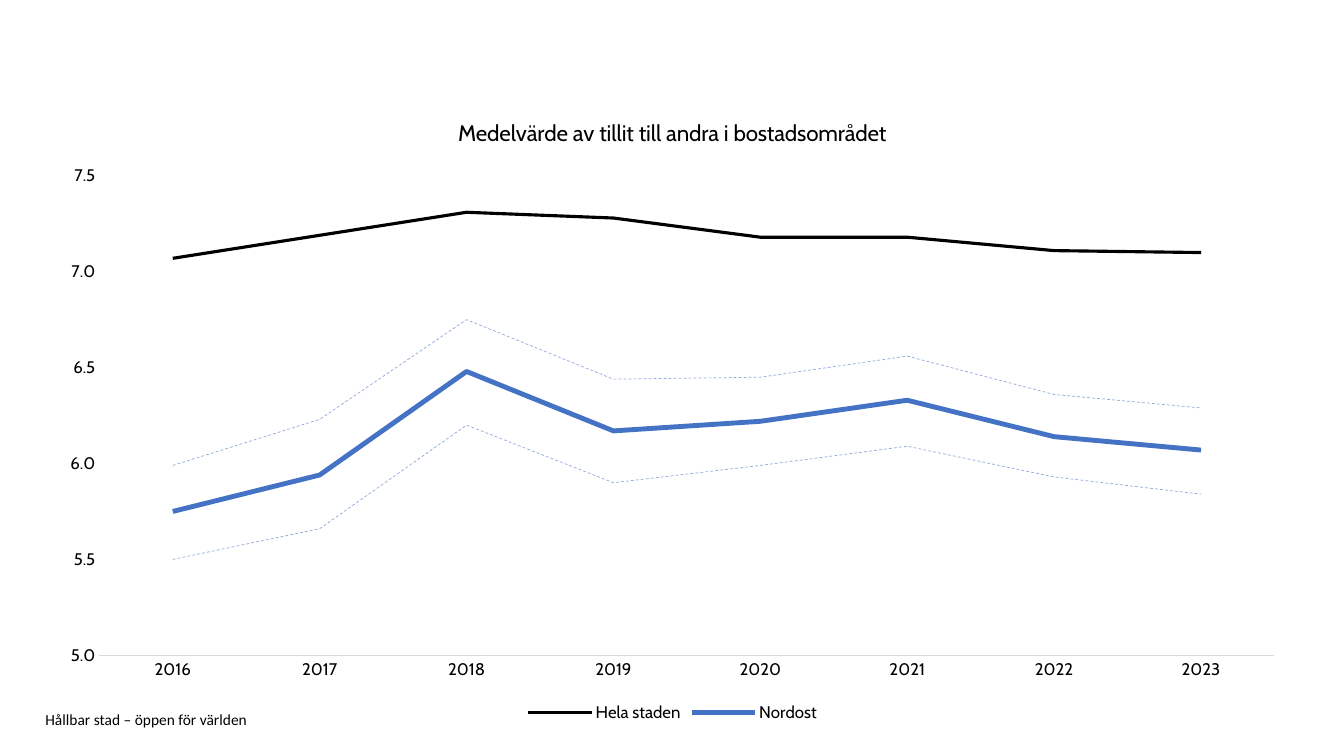
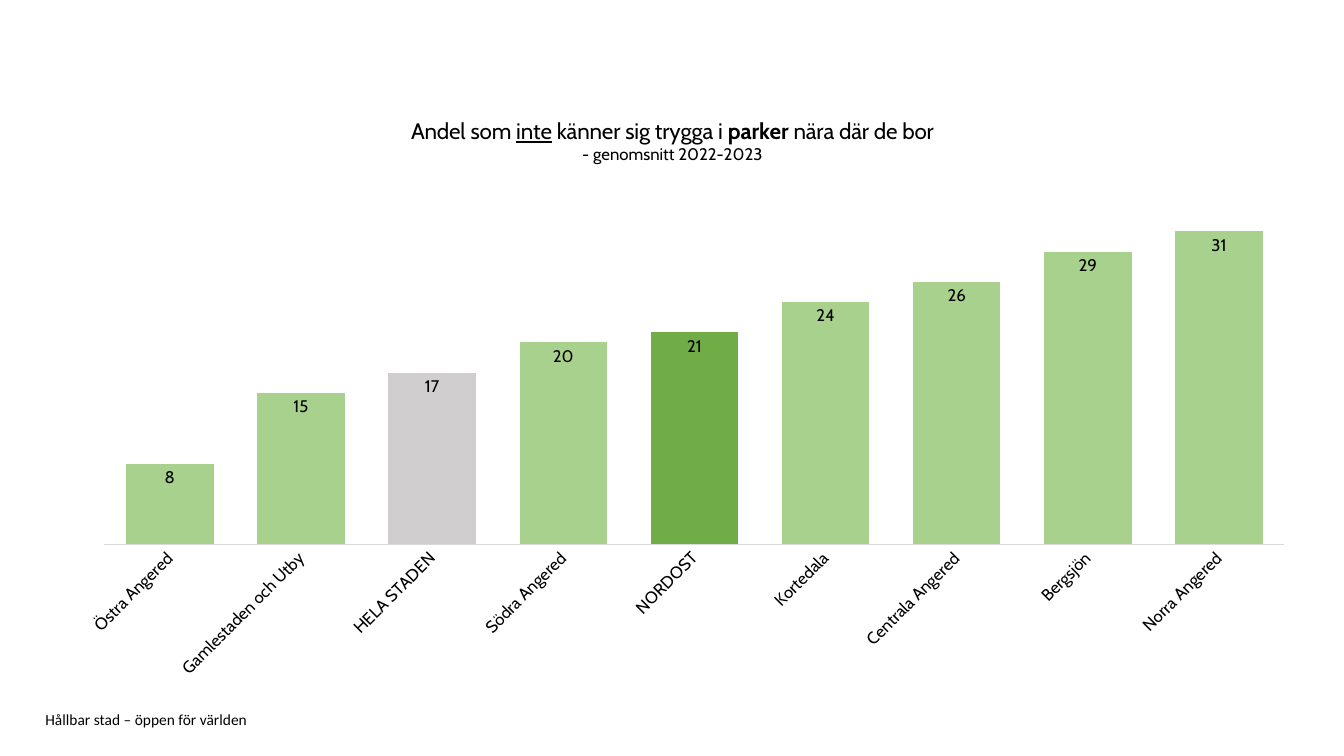
from lxml import etree
from pptx import Presentation
from pptx.chart.data import CategoryChartData
from pptx.dml.color import RGBColor
from pptx.enum.chart import XL_CHART_TYPE, XL_LABEL_POSITION, XL_LEGEND_POSITION, XL_TICK_MARK
from pptx.enum.dml import MSO_LINE
from pptx.enum.text import MSO_ANCHOR
from pptx.oxml.ns import qn
from pptx.util import Inches, Pt

BLACK, AXIS_GREY, GREY = "000000", "D9D9D9", "D0CECE"
BLUE, LIGHT_BLUE = "4472C4", "8FAADC"
GREEN, LIGHT_GREEN = "70AD47", "A9D18E"


def color(hex_string):
    return RGBColor.from_string(hex_string)


def add_chart_slide(presentation, chart_type, categories, series_values, title_lines, plot_box):
    """Add a slide with footer and chart; title lines are lists of (text, style) runs."""
    slide = presentation.slides.add_slide(presentation.slide_layouts[6])

    # Footer
    footer = slide.shapes.add_textbox(Inches(0.45), Inches(7.06), Inches(9.45), Inches(0.16))
    frame = footer.text_frame
    frame.word_wrap = True
    frame.vertical_anchor = MSO_ANCHOR.MIDDLE
    frame.margin_left = frame.margin_right = frame.margin_top = frame.margin_bottom = 0
    paragraph = frame.paragraphs[0]
    paragraph.text = "Hållbar stad – öppen för världen"
    paragraph.font.name = "Calibri"
    paragraph.font.size = Pt(11)
    paragraph.font.color.rgb = color(BLACK)

    # Chart
    chart_data = CategoryChartData()
    chart_data.categories = categories
    for name, values in series_values:
        chart_data.add_series(name, values)
    chart = slide.shapes.add_chart(
        chart_type, Inches(0.45), Inches(0.95), Inches(12.44), Inches(6.26), chart_data
    ).chart
    chart.font.name = "Cabin"
    chart.font.size = Pt(12)
    chart.font.color.rgb = color(BLACK)
    chart.has_legend = False
    chart.plots[0].vary_by_categories = False

    # Chart title
    title_frame = chart.chart_title.text_frame
    for number, (size, runs) in enumerate(title_lines):
        paragraph = title_frame.add_paragraph() if number else title_frame.paragraphs[0]
        paragraph.font.name = "Cabin"
        paragraph.font.size = Pt(size)
        paragraph.font.bold = False
        paragraph.font.color.rgb = color(BLACK)
        for text, style in runs:
            run = paragraph.add_run()
            run.text = text
            run.font.size = Pt(size)
            run.font.bold = style == "bold"
            run.font.underline = style == "underline"

    # Axes
    for axis in (chart.category_axis, chart.value_axis):
        axis.has_major_gridlines = False
        axis.major_tick_mark = axis.minor_tick_mark = XL_TICK_MARK.NONE
    chart.category_axis.format.line.color.rgb = color(AXIS_GREY)
    chart.category_axis.format.line.width = Pt(0.75)
    chart.value_axis.format.line.fill.background()

    # Inner plot area, as fractions of the chart
    plot_area = chart.plots[0]._element.getparent()
    for old_layout in plot_area.findall(qn("c:layout")):
        plot_area.remove(old_layout)
    layout = etree.Element(qn("c:layout"))
    plot_area.insert(0, layout)
    manual = etree.SubElement(layout, qn("c:manualLayout"))
    settings = [("layoutTarget", "inner"), ("xMode", "edge"), ("yMode", "edge")]
    settings += zip("xywh", plot_box)
    for tag, value in settings:
        etree.SubElement(manual, qn(f"c:{tag}")).set("val", str(value))
    return chart


presentation = Presentation()
presentation.slide_width = Inches(13.33)
presentation.slide_height = Inches(7.5)

# Slide 1: trust over time, with dashed confidence limits
trust_series = [
    ("Hela staden", [7.07, 7.19, 7.31, 7.28, 7.18, 7.18, 7.11, 7.1]),
    ("Nordost", [5.75, 5.94, 6.48, 6.17, 6.22, 6.33, 6.14, 6.07]),
    ("Series 3", [5.5, 5.66, 6.2, 5.9, 5.99, 6.09, 5.93, 5.84]),
    ("Series 4", [5.99, 6.23, 6.75, 6.44, 6.45, 6.56, 6.36, 6.29]),
]
trust_chart = add_chart_slide(
    presentation,
    XL_CHART_TYPE.LINE,
    [str(year) for year in range(2016, 2024)],
    trust_series,
    [(16, [("Medelvärde av tillit till andra i bostadsområdet", None)])],
    (0.043, 0.127, 0.937, 0.76),
)
line_styles = [(BLACK, 2.25, None), (BLUE, 3.5, None)] + [(LIGHT_BLUE, 0.5, MSO_LINE.DASH)] * 2
for series, (line_color, width, dash) in zip(trust_chart.plots[0].series, line_styles):
    series.smooth = False
    series.format.line.color.rgb = color(line_color)
    series.format.line.width = Pt(width)
    if dash:
        series.format.line.dash_style = dash

value_axis = trust_chart.value_axis
value_axis.minimum_scale, value_axis.maximum_scale, value_axis.major_unit = 5, 7.5, 0.5
value_axis.tick_labels.number_format = "0.0"
value_axis.tick_labels.number_format_is_linked = False

# Legend without the confidence limits
trust_chart.has_legend = True
legend = trust_chart.legend
legend.position = XL_LEGEND_POSITION.BOTTOM
legend.include_in_layout = False
legend_position = legend._element.find(qn("c:legendPos"))
for index in (3, 2):
    entry = etree.Element(qn("c:legendEntry"))
    etree.SubElement(entry, qn("c:idx")).set("val", str(index))
    etree.SubElement(entry, qn("c:delete")).set("val", "1")
    legend_position.addnext(entry)

# Slide 2: share feeling unsafe in parks, by area
park_shares = {
    "Östra Angered": 8,
    "Gamlestaden och Utby": 15,
    "HELA STADEN": 17,
    "Södra Angered": 20,
    "NORDOST": 21,
    "Kortedala": 24,
    "Centrala Angered": 26,
    "Bergsjön": 29,
    "Norra Angered": 31,
}
park_title = [
    (16, [
        ("Andel som ", None),
        ("inte", "underline"),
        (" känner sig trygga i ", None),
        ("parker", "bold"),
        (" nära där de bor", None),
    ]),
    (12, [("- genomsnitt 2022-2023", None)]),
]
series_name = " ".join("".join(text for text, style in runs) for size, runs in park_title)
park_chart = add_chart_slide(
    presentation,
    XL_CHART_TYPE.COLUMN_CLUSTERED,
    list(park_shares),
    [(series_name, list(park_shares.values()))],
    park_title,
    (0.047, 0.151, 0.941, 0.56),
)
park_chart.value_axis.minimum_scale = 0
park_chart.value_axis.maximum_scale = 35
park_chart.value_axis.visible = False

# Slanted area names
category_axis = park_chart.category_axis
category_axis.tick_labels.font.size = Pt(12)
category_axis._element.find(qn("c:txPr")).find(qn("a:bodyPr")).set("rot", "-2700000")

# Columns, with the two totals highlighted
plot = park_chart.plots[0]
plot.gap_width = 50
columns = plot.series[0]
columns.format.fill.solid()
columns.format.fill.fore_color.rgb = color(LIGHT_GREEN)
for area, fill_color in (("HELA STADEN", GREY), ("NORDOST", GREEN)):
    fill = columns.points[list(park_shares).index(area)].format.fill
    fill.solid()
    fill.fore_color.rgb = color(fill_color)

labels = columns.data_labels
labels.show_value = True
labels.position = XL_LABEL_POSITION.INSIDE_END
labels.number_format = "0"
labels.number_format_is_linked = False

presentation.save("out.pptx")
